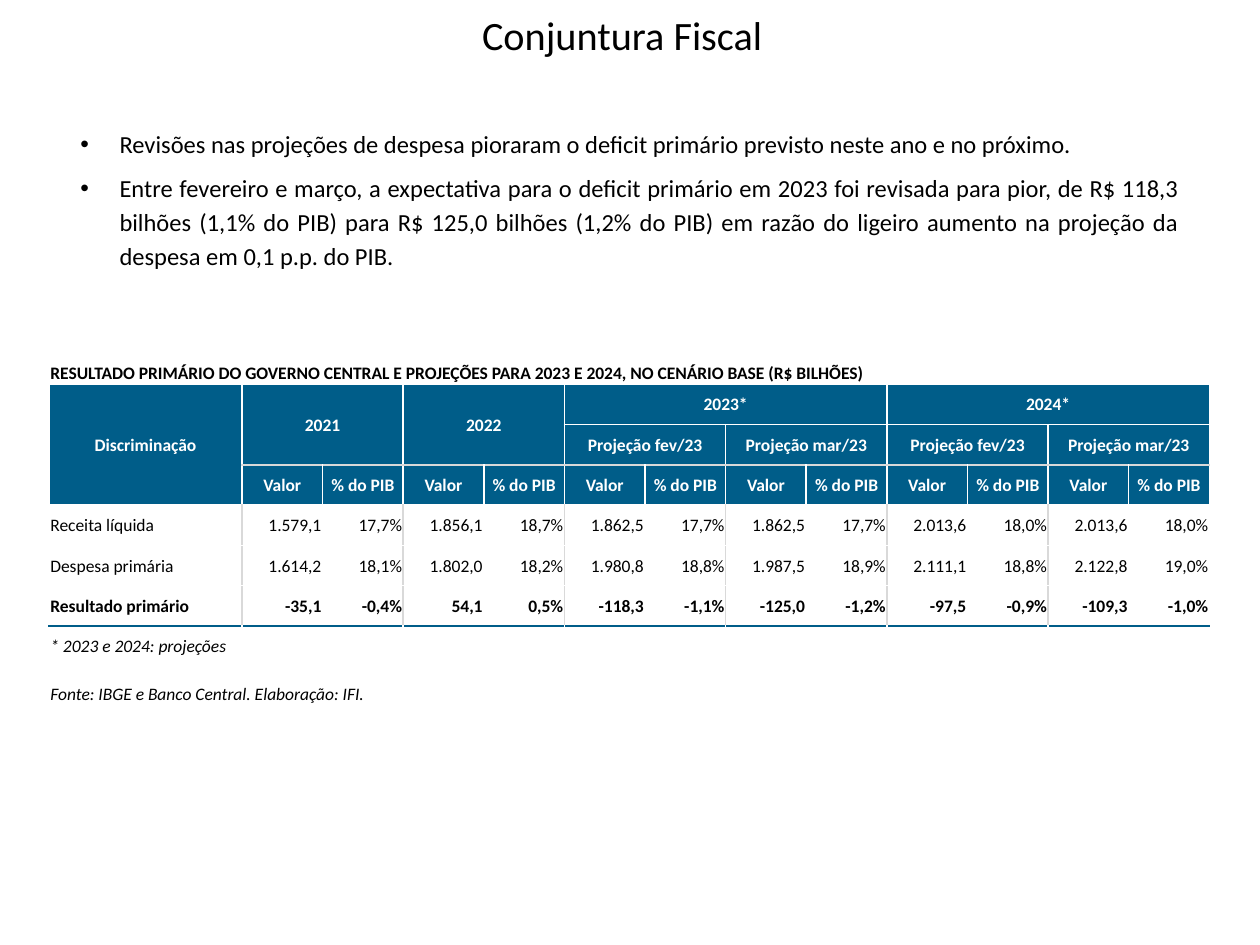
"""Build the fiscal outlook slide with the primary balance table."""
from lxml import etree
from pptx import Presentation
from pptx.dml.color import RGBColor
from pptx.enum.text import MSO_ANCHOR, MSO_AUTO_SIZE, PP_ALIGN
from pptx.oxml.ns import qn
from pptx.util import Inches, Pt

LEFT, CENTER, RIGHT, JUSTIFY = PP_ALIGN.LEFT, PP_ALIGN.CENTER, PP_ALIGN.RIGHT, PP_ALIGN.JUSTIFY
MIDDLE, BOTTOM = MSO_ANCHOR.MIDDLE, MSO_ANCHOR.BOTTOM
FIT_SHAPE = MSO_AUTO_SIZE.SHAPE_TO_FIT_TEXT
BLACK = RGBColor(0x00, 0x00, 0x00)
WHITE = RGBColor(0xFF, 0xFF, 0xFF)
BLUE = RGBColor(0x00, 0x5D, 0x89)
GRAY = RGBColor(0xD9, 0xD9, 0xD9)
FONT = "Calibri"

TITLE = "Conjuntura Fiscal"
BULLETS = [
    "Revisões nas projeções de despesa pioraram o deficit primário previsto neste ano e no próximo.",
    "Entre fevereiro e março, a expectativa para o deficit primário em 2023 foi revisada para pior, "
    "de R$ 118,3 bilhões (1,1% do PIB) para R$ 125,0 bilhões (1,2% do PIB) em razão do ligeiro "
    "aumento na projeção da despesa em 0,1 p.p. do PIB.",
]
CAPTION = "RESULTADO PRIMÁRIO DO GOVERNO CENTRAL E PROJEÇÕES PARA 2023 E 2024, NO CENÁRIO BASE (R$ BILHÕES)"
HEADERS = [
    (1, 0, 3, 1, "Discriminação"),
    (1, 1, 2, 2, "2021"),
    (1, 3, 2, 2, "2022"),
    (1, 5, 1, 4, "2023*"),
    (1, 9, 1, 4, "2024*"),
    (2, 5, 1, 2, "Projeção fev/23"),
    (2, 7, 1, 2, "Projeção mar/23"),
    (2, 9, 1, 2, "Projeção fev/23"),
    (2, 11, 1, 2, "Projeção mar/23"),
]
MEASURES = ["Valor", "% do PIB"]
RESULTS = [
    ("Receita líquida", "1.579,1", "17,7%", "1.856,1", "18,7%", "1.862,5", "17,7%",
     "1.862,5", "17,7%", "2.013,6", "18,0%", "2.013,6", "18,0%"),
    ("Despesa primária", "1.614,2", "18,1%", "1.802,0", "18,2%", "1.980,8", "18,8%",
     "1.987,5", "18,9%", "2.111,1", "18,8%", "2.122,8", "19,0%"),
    ("Resultado primário", "-35,1", "-0,4%", "54,1", "0,5%", "-118,3", "-1,1%",
     "-125,0", "-1,2%", "-97,5", "-0,9%", "-109,3", "-1,0%"),
]
NOTE = "* 2023 e 2024: projeções"
SOURCE = "Fonte: IBGE e Banco Central. Elaboração: IFI."

COLUMN_WIDTHS = [1.53] + [0.64] * 12
ROW_HEIGHTS = [0.32] * 8 + [0.3]
MEASURE_ROW = 3
FIRST_RESULT_ROW, TOTAL_ROW, NOTE_ROW, SOURCE_ROW = 4, 6, 7, 8
HEADER_ROWS = range(1, FIRST_RESULT_ROW)
RESULT_ROWS = range(FIRST_RESULT_ROW, NOTE_ROW)
LAST_COLUMN = len(COLUMN_WIDTHS) - 1


def write(paragraph, text, size=10, color=BLACK, bold=False, italic=False,
          align=LEFT, spacing=None, after=None):
    paragraph.alignment = align
    if spacing:
        paragraph.line_spacing = spacing
    if after is not None:
        paragraph.space_after = Pt(after)
    run = paragraph.add_run()
    run.text = text
    font = run.font
    font.name, font.size, font.bold, font.italic = FONT, Pt(size), bold, italic
    font.color.rgb = color


def add_bullet(paragraph):
    properties = paragraph._p.get_or_add_pPr()
    properties.set("marL", str(Inches(0.31)))
    properties.set("indent", str(-Inches(0.31)))
    etree.SubElement(properties, qn("a:buFont"), typeface="Arial")
    etree.SubElement(properties, qn("a:buChar"), char="•")


def draw_border(cell, side, color, width):
    line = etree.SubElement(cell._tc.get_or_add_tcPr(), qn(f"a:ln{side}"), w=str(Pt(width)))
    fill = etree.SubElement(line, qn("a:solidFill"))
    etree.SubElement(fill, qn("a:srgbClr"), val=str(color))


def vertical_edge(row, edge):
    is_group_edge = row in RESULT_ROWS and edge % 2 == 1 and edge <= LAST_COLUMN
    return (GRAY, 1) if is_group_edge else (WHITE, 1)


def horizontal_edge(edge, column):
    if edge == NOTE_ROW:
        return BLUE, 1.5
    return (GRAY, 1) if edge == MEASURE_ROW and column > 0 else (WHITE, 1)


def style_cell(cell, row, column):
    cell.margin_left = cell.margin_top = cell.margin_right = Inches(0.01)
    cell.margin_bottom = 0
    cell.vertical_anchor = BOTTOM if row in (0, SOURCE_ROW) else MIDDLE
    draw_border(cell, "L", *vertical_edge(row, column))
    draw_border(cell, "R", *vertical_edge(row, column + 1))
    draw_border(cell, "T", *horizontal_edge(row, column))
    draw_border(cell, "B", *horizontal_edge(row + 1, column))
    cell.fill.solid()
    cell.fill.fore_color.rgb = BLUE if row in HEADER_ROWS else WHITE


def add_title(slide):
    title = slide.shapes.title
    title.left, title.top, title.width, title.height = map(Inches, (2.96, 0, 3.96, 0.59))
    title.text_frame.vertical_anchor = MIDDLE
    write(title.text_frame.paragraphs[0], TITLE, size=23, align=CENTER, spacing=0.9)


def add_bullets(slide):
    frame = slide.shapes.add_textbox(*map(Inches, (0.54, 0.94, 8.92, 1.27))).text_frame
    frame.word_wrap = True
    frame.auto_size = FIT_SHAPE
    for index, text in enumerate(BULLETS):
        paragraph = frame.add_paragraph() if index else frame.paragraphs[0]
        add_bullet(paragraph)
        write(paragraph, text, size=14, align=JUSTIFY, spacing=1.15, after=6)


def add_results(slide):
    table = slide.shapes.add_table(
        len(ROW_HEIGHTS), len(COLUMN_WIDTHS), Inches(0.39), Inches(2.73),
        Inches(sum(COLUMN_WIDTHS)), Inches(sum(ROW_HEIGHTS))).table
    table.first_row = table.horz_banding = False
    for column, width in zip(table.columns, COLUMN_WIDTHS):
        column.width = Inches(width)
    for row, height in zip(table.rows, ROW_HEIGHTS):
        row.height = Inches(height)

    entries = {(0, 0): (CAPTION, {"bold": True}),
               (NOTE_ROW, 0): (NOTE, {"italic": True, "align": JUSTIFY}),
               (SOURCE_ROW, 0): (SOURCE, {"italic": True})}
    header_format = {"bold": True, "color": WHITE, "align": CENTER}
    spans = [(0, 0, 1, len(COLUMN_WIDTHS)), (SOURCE_ROW, 0, 1, 3)]
    for row, column, height, width, text in HEADERS:
        entries[row, column] = (text, header_format)
        spans.append((row, column, height, width))
    for column in range(1, LAST_COLUMN + 1):
        entries[MEASURE_ROW, column] = (MEASURES[(column - 1) % 2], header_format)
    for row, values in zip(RESULT_ROWS, RESULTS):
        for column, text in enumerate(values):
            entries[row, column] = (text, {"bold": row == TOTAL_ROW,
                                           "align": RIGHT if column else LEFT})

    for row in range(len(ROW_HEIGHTS)):
        for column in range(len(COLUMN_WIDTHS)):
            cell = table.cell(row, column)
            style_cell(cell, row, column)
            if (row, column) in entries:
                text, text_format = entries[row, column]
                write(cell.text_frame.paragraphs[0], text, **text_format)
    for row, column, height, width in spans:
        table.cell(row, column).merge(table.cell(row + height - 1, column + width - 1))


def main():
    deck = Presentation()
    deck.slide_width, deck.slide_height = Inches(10), Inches(7.5)
    slide = deck.slides.add_slide(deck.slide_layouts.get_by_name("Title Only"))
    add_title(slide)
    add_bullets(slide)
    add_results(slide)
    deck.save("out.pptx")


if __name__ == "__main__":
    main()
